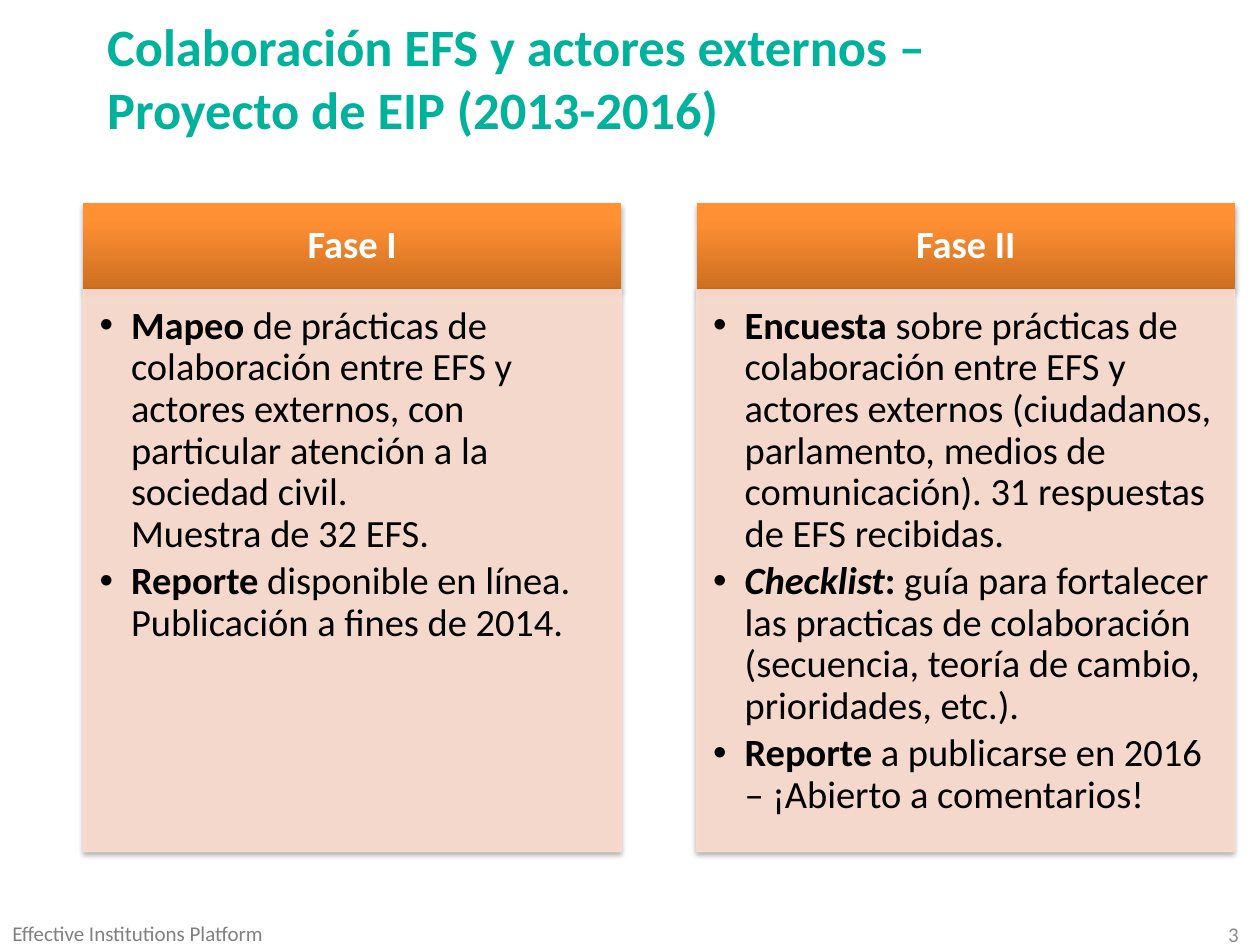
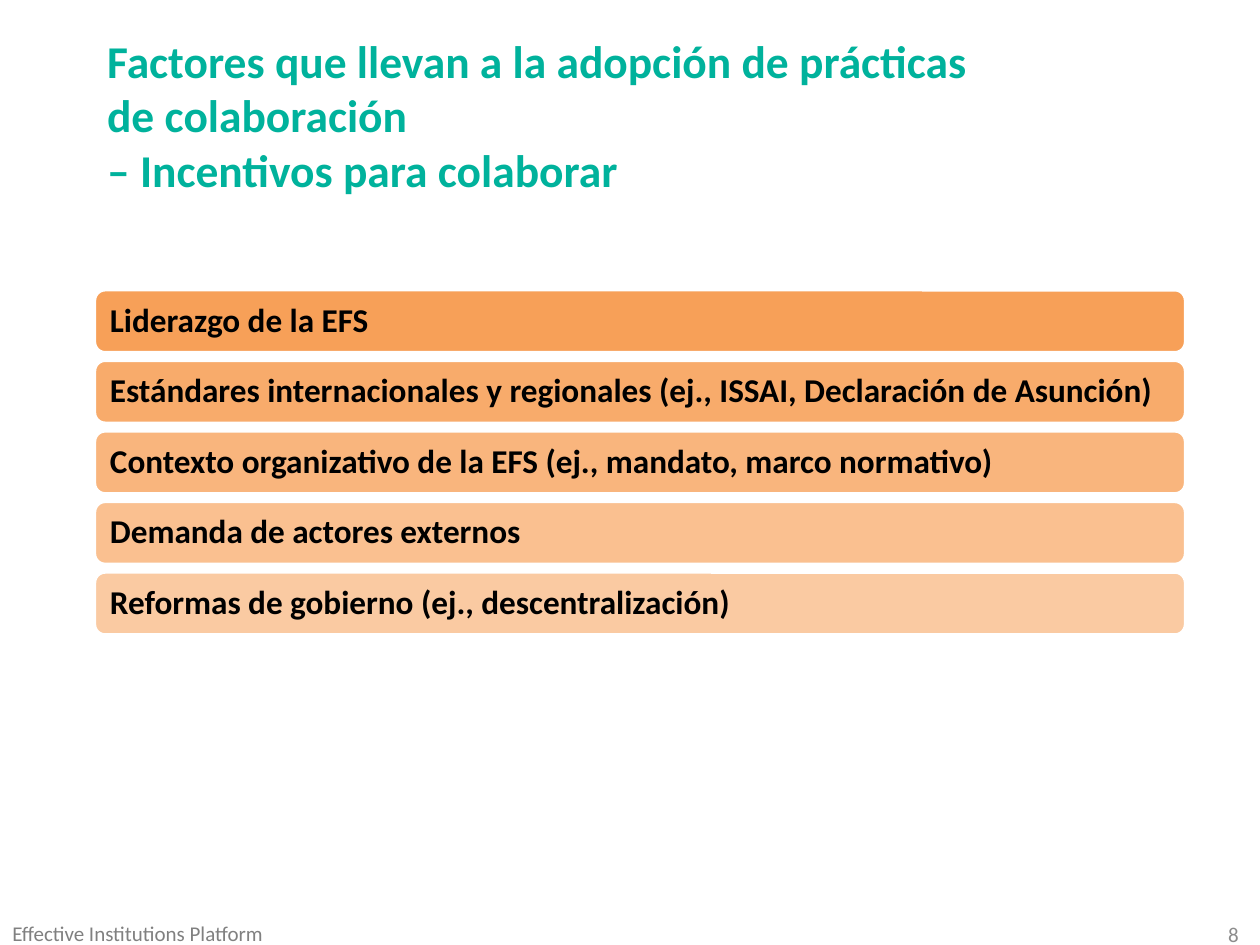
from dataclasses import dataclass
from lxml.etree import SubElement
from pptx import Presentation
from pptx.dml.color import RGBColor
from pptx.enum.shapes import MSO_SHAPE
from pptx.enum.text import MSO_ANCHOR, MSO_AUTO_SIZE, PP_ALIGN
from pptx.oxml.ns import qn
from pptx.util import Inches, Pt

FONT = "Calibri"
TEAL = RGBColor(0x00, 0xB2, 0x9C)
WHITE = RGBColor(0xFF, 0xFF, 0xFF)
BLACK = RGBColor(0x00, 0x00, 0x00)
GREY = RGBColor(0x80, 0x80, 0x80)
NUMBER_GREY = RGBColor(0x8C, 0x8C, 0x8C)
PEACH = RGBColor(0xFC, 0xDD, 0xCF)
ORANGE = RGBColor(0xF7, 0x96, 0x46)
HEADER_STOPS = (
    (0, RGBColor(0xCC, 0x6E, 0x20)),
    (80, RGBColor(0xFF, 0x90, 0x34)),
    (100, RGBColor(0xFF, 0x91, 0x36)),
)
FOOTER = "Effective Institutions Platform"
COMPARISON_LAYOUT, TITLE_LAYOUT = 4, 5
DEFAULT_INSETS = (0.1, 0.05, 0.1, 0.05)


@dataclass(frozen=True)
class Span:
    text: str
    bold: bool = False
    italic: bool = False


@dataclass(frozen=True)
class Phase:
    name: str
    left: float
    points: list


PHASES = [
    Phase("Fase I", 0.66, [
        [Span("Mapeo", bold=True),
         Span(" de prácticas de colaboración entre EFS y actores externos, con "
              "particular atención a la sociedad civil. \nMuestra de 32 EFS.")],
        [Span("Reporte", bold=True),
         Span(" disponible en línea. Publicación a fines de 2014.")],
    ]),
    Phase("Fase II", 5.53, [
        [Span("Encuesta ", bold=True),
         Span("sobre prácticas de colaboración entre EFS y actores externos "
              "(ciudadanos, parlamento, medios de comunicación). 31 respuestas "
              "de EFS recibidas.")],
        [Span("Checklist", bold=True, italic=True), Span(": ", bold=True),
         Span("guía para fortalecer las practicas de colaboración (secuencia, "
              "teoría de cambio, prioridades, etc.).")],
        [Span("Reporte", bold=True),
         Span(" a publicarse en 2016 – ¡Abierto a comentarios!")],
    ]),
]

INCENTIVES = [
    "Liderazgo de la EFS",
    "Estándares internacionales y regionales (ej., ISSAI, Declaración de Asunción)",
    "Contexto organizativo de la EFS (ej., mandato, marco normativo)",
    "Demanda de actores externos",
    "Reformas de gobierno (ej., descentralización)",
]


def place(shape, left: float, top: float, width: float, height: float) -> None:
    shape.left, shape.top = Inches(left), Inches(top)
    shape.width, shape.height = Inches(width), Inches(height)


def add_bullet(paragraph) -> None:
    properties = paragraph._p.get_or_add_pPr()
    properties.set("marL", str(Inches(0.25)))
    properties.set("indent", str(Inches(-0.25)))
    SubElement(properties, qn("a:buFont"), typeface="Arial")
    SubElement(properties, qn("a:buChar"), char="•")


def write(shape, paragraphs: list, *, size: float, color: RGBColor,
          bold: bool = False, align=PP_ALIGN.LEFT, anchor=MSO_ANCHOR.TOP,
          insets: tuple = DEFAULT_INSETS, line_spacing: float = 1.0,
          space_after: float = 0, bulleted: bool = False) -> None:
    frame = shape.text_frame
    frame.word_wrap = True
    frame.auto_size = MSO_AUTO_SIZE.NONE
    frame.vertical_anchor = anchor
    (frame.margin_left, frame.margin_top,
     frame.margin_right, frame.margin_bottom) = map(Inches, insets)
    for index, content in enumerate(paragraphs):
        paragraph = frame.add_paragraph() if index else frame.paragraphs[0]
        if bulleted:
            add_bullet(paragraph)
        paragraph.alignment = align
        paragraph.line_spacing = line_spacing
        paragraph.space_before = Pt(0)
        paragraph.space_after = Pt(space_after)
        spans = [Span(content, bold)] if isinstance(content, str) else content
        for span in spans:
            for line_index, line in enumerate(span.text.split("\n")):
                if line_index:
                    paragraph.add_line_break()
                run = paragraph.add_run()
                run.text = line
                run.font.name = FONT
                run.font.size = Pt(size)
                run.font.bold = span.bold
                run.font.italic = span.italic
                run.font.color.rgb = color


def set_opacity(fill_parent, percent: int) -> None:
    color = fill_parent.find(qn("a:solidFill")).find(qn("a:srgbClr"))
    SubElement(color, qn("a:alpha"), val=str(percent * 1000))


def fill_solid(shape, color: RGBColor, opacity: int) -> None:
    shape.fill.solid()
    shape.fill.fore_color.rgb = color
    set_opacity(shape._element.spPr, opacity)


def fill_header(shape) -> None:
    shape.fill.gradient()
    shape.fill.gradient_angle = 90
    stops = shape._element.spPr.find(qn("a:gradFill")).find(qn("a:gsLst"))
    for stop in list(stops):
        stops.remove(stop)
    for position, color in HEADER_STOPS:
        stop = SubElement(stops, qn("a:gs"), pos=str(position * 1000))
        SubElement(stop, qn("a:srgbClr"), val=str(color))


def add_shadow(shape) -> None:
    effects = SubElement(shape._element.spPr, qn("a:effectLst"))
    shadow = SubElement(effects, qn("a:outerShdw"), blurRad=str(Pt(3.1)),
                        dist=str(Pt(1.8)), dir="5400000", rotWithShape="0")
    color = SubElement(shadow, qn("a:srgbClr"), val="000000")
    SubElement(color, qn("a:alpha"), val="35000")


def add_page(deck, layout: int, title: list, number: int, *, size: float,
             top: float, width: float, height: float):
    page = deck.slides.add_slide(deck.slide_layouts[layout])
    place(page.shapes.title, 0.75, top, width, height)
    write(page.shapes.title, title, size=size, color=TEAL, bold=True)
    number_box = page.shapes.add_textbox(
        Inches(7.6), Inches(7.29), Inches(2.33), Inches(0.24))
    write(number_box, [str(number)], size=12, color=NUMBER_GREY,
          align=PP_ALIGN.RIGHT, anchor=MSO_ANCHOR.MIDDLE)
    footer_box = page.shapes.add_textbox(
        Inches(0), Inches(7.26), Inches(4.84), Inches(0.3))
    write(footer_box, [FOOTER], size=12, color=GREY)
    return page


def fill_phase(header, body, phase: Phase) -> None:
    place(header, phase.left, 1.61, 4.27, 0.69)
    fill_header(header)
    header.line.fill.background()
    add_shadow(header)
    write(header, [phase.name], size=22, color=WHITE, bold=True,
          align=PP_ALIGN.CENTER, anchor=MSO_ANCHOR.MIDDLE,
          insets=(0.17, 0.1, 0.17, 0.1), line_spacing=0.9)
    place(body, phase.left, 2.3, 4.27, 4.46)
    fill_solid(body, PEACH, 90)
    body.line.color.rgb = PEACH
    body.line.width = Pt(0.75)
    set_opacity(body._element.spPr.find(qn("a:ln")), 90)
    add_shadow(body)
    write(body, phase.points, size=22, color=BLACK, bulleted=True,
          insets=(0.13, 0.13, 0.17, 0.19), line_spacing=0.9, space_after=3.3)


def add_incentive(page, text: str, row: int) -> None:
    bar = page.shapes.add_shape(
        MSO_SHAPE.ROUNDED_RECTANGLE, Inches(0.75), Inches(2.3 + row * 0.56),
        Inches(8.66), Inches(0.5))
    bar.adjustments[0] = 0.17
    bar.shadow.inherit = False
    fill_solid(bar, ORANGE, 90 - row * 10)
    bar.line.color.rgb = WHITE
    bar.line.width = Pt(2)
    write(bar, [text], size=19, color=BLACK, bold=True, line_spacing=0.9,
          anchor=MSO_ANCHOR.MIDDLE, insets=(0.1, 0.08, 0.1, 0.08))


def main() -> None:
    deck = Presentation()
    deck.slide_width, deck.slide_height = Inches(10), Inches(7.5)

    phases_page = add_page(
        deck, COMPARISON_LAYOUT,
        ["Colaboración EFS y actores externos –", "Proyecto de EIP (2013-2016)"],
        3, size=30, top=0.06, width=9.06, height=1.11)
    holders = phases_page.placeholders
    for index, phase in enumerate(PHASES):
        fill_phase(holders[2 * index + 1], holders[2 * index + 2], phase)

    incentives_page = add_page(
        deck, TITLE_LAYOUT,
        ["Factores que llevan a la adopción de prácticas de colaboración",
         "– Incentivos para colaborar"],
        8, size=26, top=0.21, width=7.4, height=1.41)
    for row, text in enumerate(INCENTIVES):
        add_incentive(incentives_page, text, row)

    deck.save("out.pptx")


if __name__ == "__main__":
    main()
